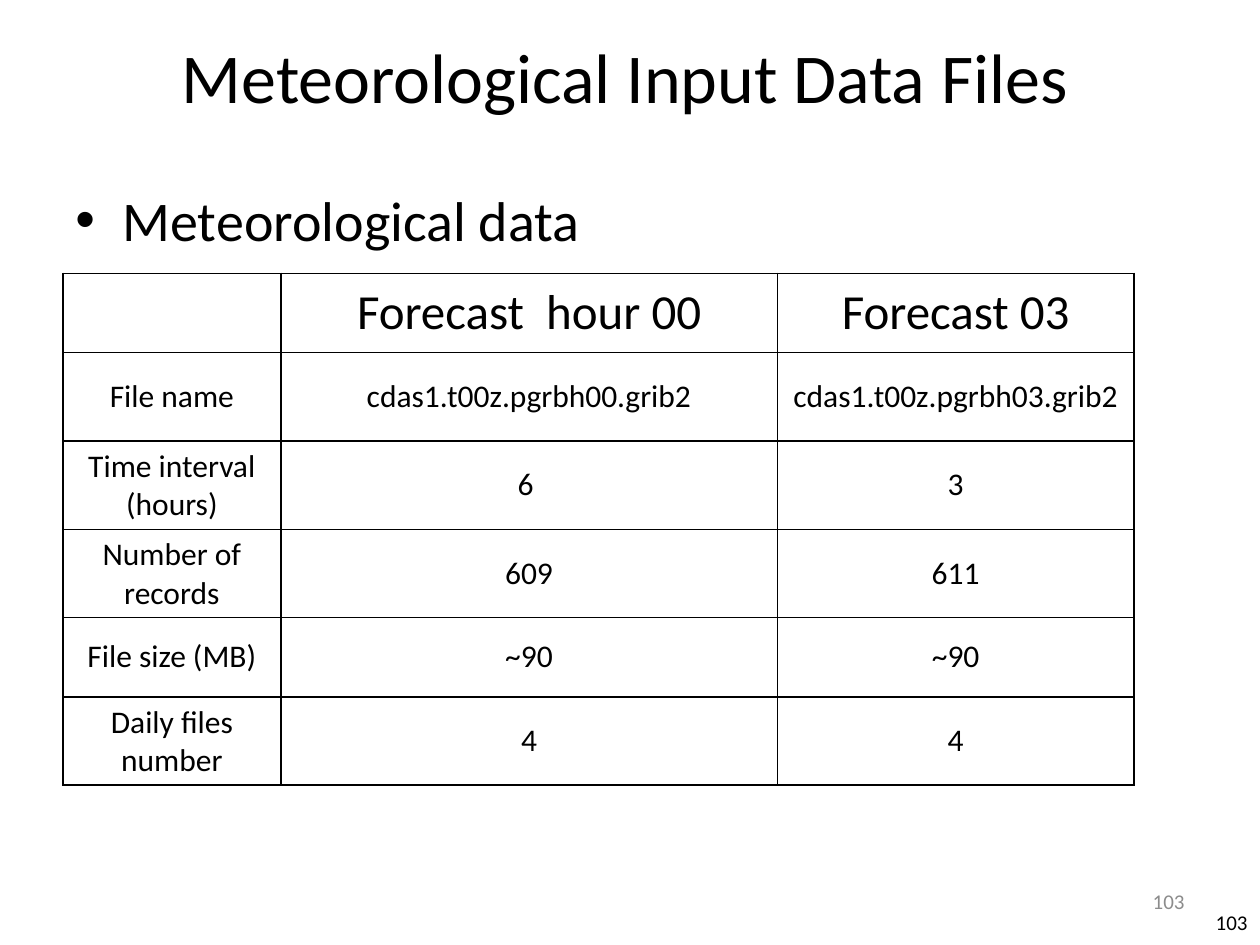
import lxml.etree
import pptx
import pptx.dml.color
import pptx.enum.text
import pptx.oxml.ns
import pptx.util

Cm = pptx.util.Cm
Pt = pptx.util.Pt
qn = pptx.oxml.ns.qn
Align = pptx.enum.text.PP_ALIGN
Anchor = pptx.enum.text.MSO_ANCHOR


def shade(code):
    return pptx.dml.color.RGBColor.from_string(code)


class Deck:
    """Holds the style and the current slide, and adds elements to it."""

    font = "Calibri"
    ink = "000000"
    rule = 1

    def __init__(self, wide, high):
        self.file = pptx.Presentation()
        self.file.slide_width, self.file.slide_height = Cm(wide), Cm(high)
        self.slide = self.file.slides.add_slide(self.file.slide_layouts[6])

    def style(self, frame, size, align, color=None):
        for para in frame.paragraphs:
            para.alignment = align
            for run in para.runs:
                run.font.name = self.font
                run.font.size = Pt(size)
                run.font.color.rgb = shade(color or self.ink)

    def text(self, words, box, size, align, anchor=Anchor.MIDDLE, color=None):
        frame = self.slide.shapes.add_textbox(*map(Cm, box)).text_frame
        frame.word_wrap = True
        frame.vertical_anchor = anchor
        frame.text = words
        self.style(frame, size, align, color)
        return frame

    def title(self, words, box):
        frame = self.text(words, box, 40, Align.CENTER)
        frame.paragraphs[0].line_spacing = 0.85

    def bullet(self, words, box):
        frame = self.text(words, box, 32, Align.LEFT, Anchor.TOP)
        props = frame.paragraphs[0]._p.get_or_add_pPr()
        props.set("marL", str(Cm(0.95)))
        props.set("indent", str(-Cm(0.95)))
        lxml.etree.SubElement(props, qn("a:buFont"), typeface="Arial")
        lxml.etree.SubElement(props, qn("a:buChar"), char="•")

    def border(self, cell):
        props = cell._tc.get_or_add_tcPr()
        for spot, side in enumerate("LRTB"):
            line = lxml.etree.Element(qn("a:ln" + side), w=str(Pt(self.rule)))
            fill = lxml.etree.SubElement(line, qn("a:solidFill"))
            lxml.etree.SubElement(fill, qn("a:srgbClr"), val=self.ink)
            props.insert(spot, line)

    def table(self, rows, left, top, widths, heights):
        grid = self.slide.shapes.add_table(
            len(rows), len(widths), Cm(left), Cm(top),
            Cm(sum(widths)), Cm(sum(heights))).table
        grid.first_row = grid.horz_banding = False
        for col, width in zip(grid.columns, widths):
            col.width = Cm(width)
        for r, (row, height) in enumerate(zip(rows, heights)):
            grid.rows[r].height = Cm(height)
            for c, words in enumerate(row):
                cell = grid.cell(r, c)
                cell.text_frame.text = words
                cell.vertical_anchor = Anchor.MIDDLE
                cell.fill.background()
                self.style(cell.text_frame, 18 if r else 28, Align.CENTER)
                self.border(cell)


def main():
    deck = Deck(25.4, 19.05)
    deck.text("103", (23.5, 18.08, 1.9, 1.02), 12, Align.RIGHT)
    deck.title("Meteorological Input Data Files", (1.27, 0.76, 22.66, 1.78))
    deck.bullet("Meteorological data", (1.27, 3.61, 22.86, 12.57))
    rows = [
        ("", "Forecast  hour 00", "Forecast 03"),
        ("File name", "cdas1.t00z.pgrbh00.grib2", "cdas1.t00z.pgrbh03.grib2"),
        ("Time interval\n(hours)", "6 ", "3"),
        ("Number of records", "609", "611"),
        ("File size (MB)", "~90", "~90"),
        ("Daily files number", "4", "4"),
    ]
    deck.table(rows, 1.27, 5.51, (4.39, 10.01, 7.19),
               (1.6, 1.78, 1.7, 1.7, 1.6, 1.6))
    deck.text("103", (18.21, 17.65, 5.92, 1.02), 12, Align.RIGHT,
              color="8C8C8C")
    deck.file.save("out.pptx")


if __name__ == "__main__":
    main()
